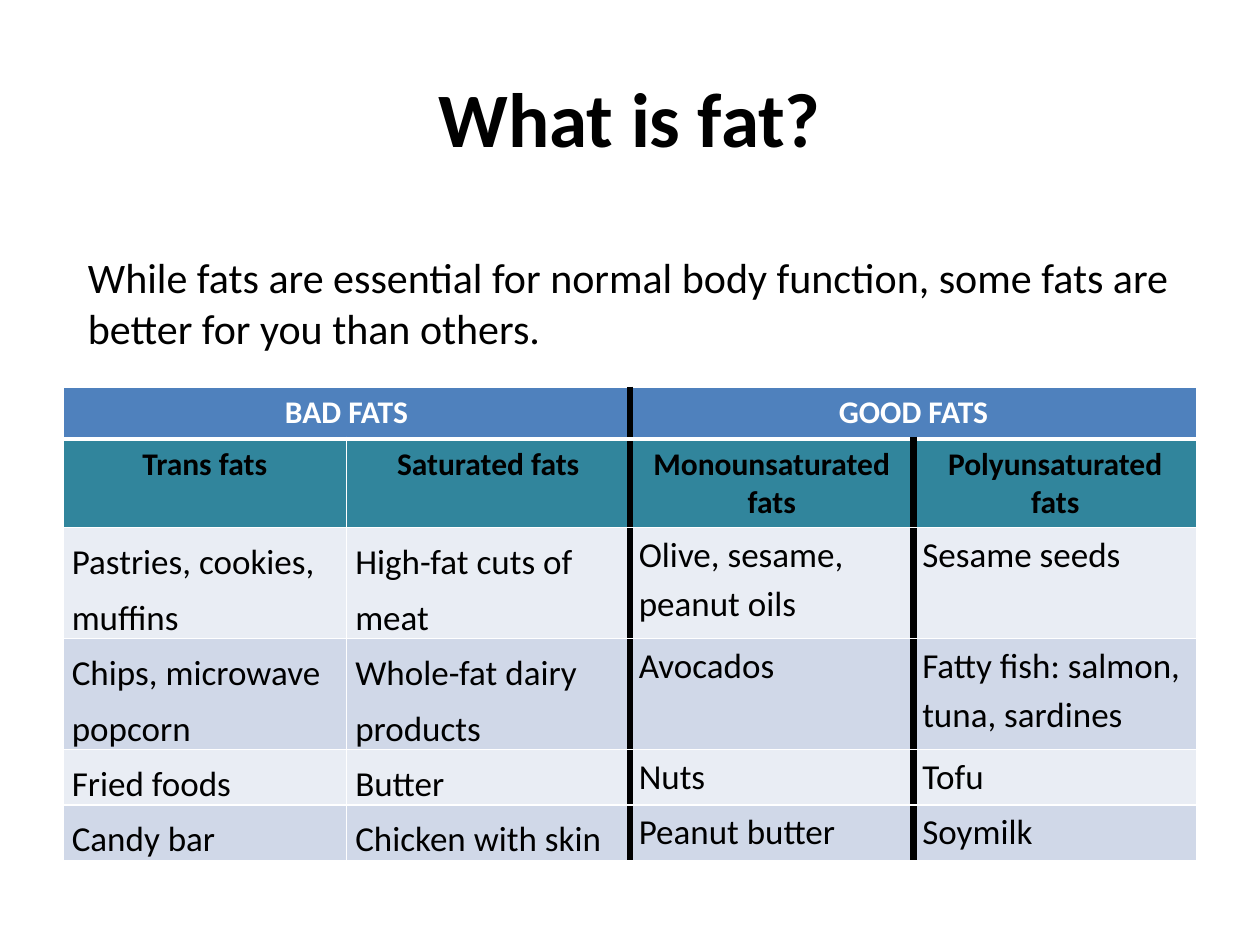
import pptx
import pptx.dml.color
import pptx.enum.text
import pptx.oxml.ns
import pptx.util
from lxml import etree

COLORS = {
    "text": "000000",
    "white": "FFFFFF",
    "group": "4F81BD",
    "heading": "31859C",
    "light": "E9EDF4",
    "dark": "D0D8E8",
}
ALIGN = pptx.enum.text.PP_ALIGN
ANCHOR = pptx.enum.text.MSO_ANCHOR
FONT = "Calibri"
WIDTH, HEIGHT = 10, 7.5

GROUPS = ["BAD FATS", "GOOD FATS"]
HEADINGS = ["Trans fats", "Saturated fats", "Monounsaturated fats", "Polyunsaturated fats"]
FOODS = [
    ["Pastries, cookies, muffins", "High-fat cuts of meat", "Olive, sesame, peanut oils", "Sesame seeds"],
    ["Chips, microwave popcorn", "Whole-fat dairy products", "Avocados", "Fatty fish: salmon, tuna, sardines"],
    ["Fried foods", "Butter", "Nuts", "Tofu"],
    ["Candy bar", "Chicken with skin", "Peanut butter", "Soymilk"],
]


class SlideBuilder:
    def __init__(self, presentation):
        self.slide = presentation.slides.add_slide(presentation.slide_layouts[6])

    def box(self, left, top, width, height):
        """Turn shares of the slide's size into lengths."""
        return [pptx.util.Inches(share * size) for share, size in
                zip((left, top, width, height), (WIDTH, HEIGHT) * 2)]

    def rgb(self, color):
        return pptx.dml.color.RGBColor.from_string(COLORS[color])

    def styled_run(self, paragraph, text, size, color="text", bold=False, align=ALIGN.LEFT):
        paragraph.alignment = align
        run = paragraph.add_run()
        run.text = text
        run.font.name = FONT
        run.font.size = pptx.util.Pt(size)
        run.font.bold = bold
        run.font.color.rgb = self.rgb(color)

    def text(self, area, text, size, anchor=ANCHOR.TOP, **style):
        frame = self.slide.shapes.add_textbox(*self.box(*area)).text_frame
        frame.word_wrap = True
        frame.vertical_anchor = anchor
        self.styled_run(frame.paragraphs[0], text, size, **style)

    def borders(self, cell, **sides):
        """Draw each side, given as (color, points), in the order the schema asks for."""
        properties = cell._tc.get_or_add_tcPr()
        for position, side in enumerate("LRTB"):
            color, points = sides.get(side, ("white", 1))
            line = etree.Element(pptx.oxml.ns.qn(f"a:ln{side}"), w=str(pptx.util.Pt(points)))
            fill = etree.SubElement(line, pptx.oxml.ns.qn("a:solidFill"))
            etree.SubElement(fill, pptx.oxml.ns.qn("a:srgbClr"), val=COLORS[color])
            properties.insert(position, line)

    def cell(self, cell, text, fill, size, **style):
        cell.fill.solid()
        cell.fill.fore_color.rgb = self.rgb(fill)
        self.styled_run(cell.text_frame.paragraphs[0], text, size, **style)

    def body_cell(self, cell, text, fill, spacing):
        cell.margin_left = cell.margin_right = pptx.util.Inches(0.07)
        cell.margin_top = cell.margin_bottom = 0
        self.cell(cell, text, fill, 20)
        paragraph = cell.text_frame.paragraphs[0]
        paragraph.line_spacing = spacing
        paragraph.space_after = pptx.util.Pt(6)

    def fat_table(self, area):
        row_count, column_count = len(FOODS) + 2, len(HEADINGS)
        table = self.slide.shapes.add_table(row_count, column_count, *self.box(*area)).table
        for row in table.rows:
            row.height = pptx.util.Inches(0.41)

        for index, group in enumerate(GROUPS):
            first = table.cell(0, 2 * index)
            first.merge(table.cell(0, 2 * index + 1))
            self.cell(first, group, "group", 18, color="white", bold=True, align=ALIGN.CENTER)
        for column, heading in enumerate(HEADINGS):
            self.cell(table.cell(1, column), heading, "heading", 18, bold=True, align=ALIGN.CENTER)
        for row, foods in enumerate(FOODS, start=2):
            for column, food in enumerate(foods):
                self.body_cell(table.cell(row, column), food, "dark" if row % 2 else "light",
                               1.32 if column < 2 else 1.15)

        divider, header_rule = ("text", 4.5), ("white", 3)
        for row in range(row_count):
            divided = {2} if row == 0 else {2, 3}
            for column in range(column_count):
                sides = {}
                if column in divided:
                    sides["L"] = divider
                # A merged cell's right edge lies one column further on.
                if column + 1 in divided or (row == 0 and column == 0):
                    sides["R"] = divider
                if row == 0:
                    sides["B"] = header_rule
                if row == 1:
                    sides["T"] = header_rule
                self.borders(table.cell(row, column), **sides)


def main():
    presentation = pptx.Presentation()
    presentation.slide_width = pptx.util.Inches(WIDTH)
    presentation.slide_height = pptx.util.Inches(HEIGHT)
    builder = SlideBuilder(presentation)
    builder.text((0.05, 0.04, 0.9, 1 / 6), "What is fat?", 44,
                 anchor=ANCHOR.MIDDLE, bold=True, align=ALIGN.CENTER)
    builder.fat_table((0.05, 0.41, 0.9, 0.5))
    builder.text((0.06, 0.26, 0.88, 0.12),
                 "While fats are essential for normal body function, "
                 "some fats are better for you than others.", 24)
    presentation.save("out.pptx")


if __name__ == "__main__":
    main()
